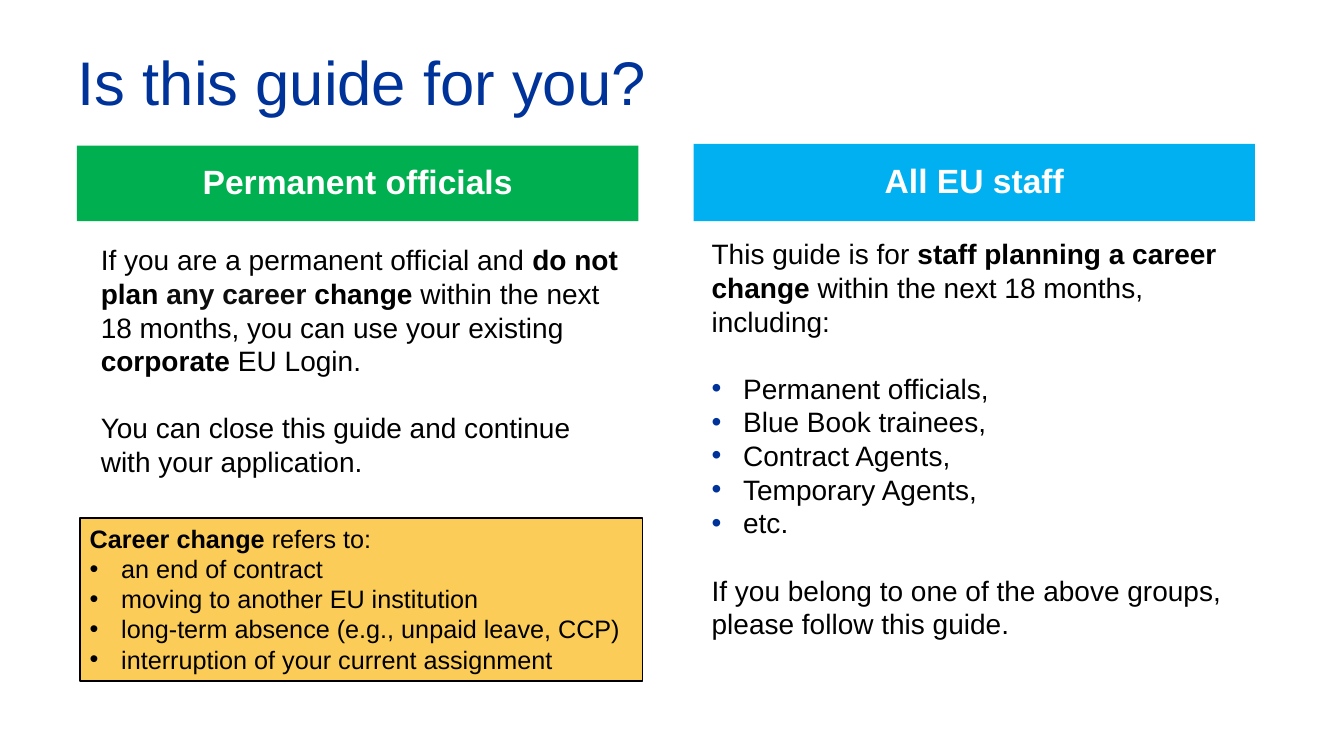
from pptx import Presentation
from pptx.dml.color import RGBColor as RGB
from pptx.enum.shapes import MSO_SHAPE as Shape
from pptx.enum.text import MSO_ANCHOR as Anchor, PP_ALIGN as Align
from pptx.oxml import parse_xml
from pptx.oxml.ns import nsdecls
from pptx.util import Pt

INK = {"navy": "003399", "green": "00B050", "blue": "00B0F0", "amber": "FBCD58",
       "black": "000000", "soft": "0D0D0D", "white": "FFFFFF"}


def tint(name):
    return RGB.from_string(INK[name])


def write(box, rows, size, inset, dot="black"):
    """Fill a box; each row is (runs, bulleted, space before)."""
    frame = box.text_frame
    frame.word_wrap = True
    frame.vertical_anchor = Anchor.TOP
    frame.margin_left = frame.margin_right = Pt(inset[0])
    frame.margin_top = frame.margin_bottom = Pt(inset[1])
    for i, (runs, listed, gap) in enumerate(rows):
        para = frame.paragraphs[0] if i == 0 else frame.add_paragraph()
        para.alignment = Align.LEFT
        if listed:
            props = para._p.get_or_add_pPr()
            props.set("marL", str(Pt(22.5)))
            props.set("indent", str(-Pt(22.5)))
            for tag in (f'<a:buClr {nsdecls("a")}><a:srgbClr val="{INK[dot]}"/></a:buClr>',
                        f'<a:buFont {nsdecls("a")} typeface="Arial"/>',
                        f'<a:buChar {nsdecls("a")} char="•"/>'):
                props.append(parse_xml(tag))
        if gap:
            para.space_before = Pt(gap)
        para.font.name = "Arial"
        para.font.size = Pt(size)
        para.font.color.rgb = tint("black")
        for text, bold, *shade in runs:
            run = para.add_run()
            run.text = text
            if bold:
                run.font.bold = True
            if shade:
                run.font.color.rgb = tint(shade[0])


deck = Presentation()
deck.slide_width, deck.slide_height = Pt(960), Pt(540)
slide = deck.slides.add_slide(deck.slide_layouts[6])
shapes = slide.shapes

# Title
title = shapes.add_textbox(Pt(48.5), Pt(28.8), Pt(447), Pt(64)).text_frame
title.word_wrap = True
title.vertical_anchor = Anchor.MIDDLE
para = title.paragraphs[0]
para.text = "Is this guide for you?"
para.line_spacing = 0.9
para.font.name = "Arial"
para.font.size = Pt(44)
para.font.color.rgb = tint("navy")

# Column headings
for text, fill, left, top, high in (
        ("Permanent officials", "green", 55, 104, 54),
        ("All EU staff", "blue", 495.5, 102.8, 55.2)):
    head = shapes.add_shape(Shape.RECTANGLE, Pt(left), Pt(top), Pt(401), Pt(high))
    head.shadow.inherit = False
    head.fill.solid()
    head.fill.fore_color.rgb = tint(fill)
    head.line.fill.background()
    head.text_frame.vertical_anchor = Anchor.MIDDLE
    para = head.text_frame.paragraphs[0]
    para.text = text
    para.alignment = Align.CENTER
    para.line_spacing = 0.9
    para.font.name = "Arial"
    para.font.size = Pt(24)
    para.font.bold = True
    para.font.color.rgb = tint("white")

# Left column
left = shapes.add_textbox(Pt(60.5), Pt(162), Pt(395), Pt(199.5))
write(left, [
    ([("If you are a permanent official and", False), (" do not plan ", True),
      ("any career ", True, "soft"), ("change", True),
      (" within the next 18 months, you can use your existing ", False),
      ("corporate ", True), ("EU Login.", False)], False, 0),
    ([("You can close this guide and continue with your application.", False)], False, 24),
], 20, (11.5, 11.5))

# Right column
groups = ("Permanent officials,", "Blue Book trainees,", "Contract Agents,",
          "Temporary Agents,", "etc.")
right = shapes.add_textbox(Pt(496.8), Pt(157.7), Pt(400), Pt(345))
write(right, [
    ([("This guide is for ", False), ("staff planning a career change", True),
      (" within the next 18 months, including:", False)], False, 0),
    *[([(group, False)], True, 0 if i else 24) for i, group in enumerate(groups)],
    ([("If you belong to one of the above groups, please follow this guide.", False)],
     False, 24),
], 20, (11.5, 11.5), "navy")

# Definition box
cases = ("an end of contract", "moving to another EU institution",
         "long-term absence (e.g., unpaid leave, CCP)",
         "interruption of your current assignment")
note = shapes.add_shape(Shape.RECTANGLE, Pt(57), Pt(370), Pt(401.8), Pt(116.5))
note.shadow.inherit = False
note.fill.solid()
note.fill.fore_color.rgb = tint("amber")
note.line.color.rgb = tint("black")
note.line.width = Pt(1)
write(note, [
    ([("Career change ", True), ("refers to:", False)], False, 0),
    *[([(case, False)], True, 0) for case in cases],
], 18, (7.2, 3.6))

deck.save("out.pptx")
